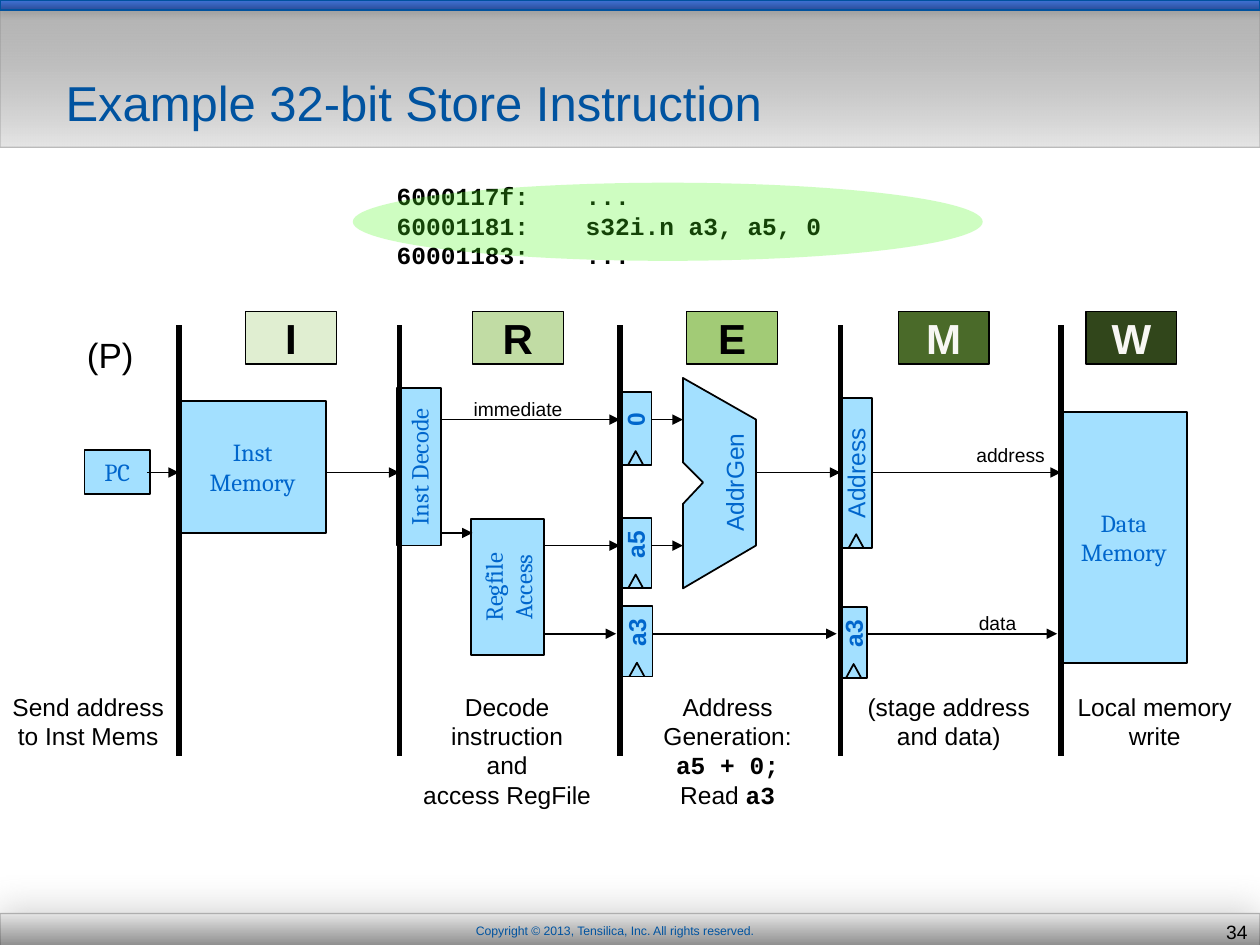
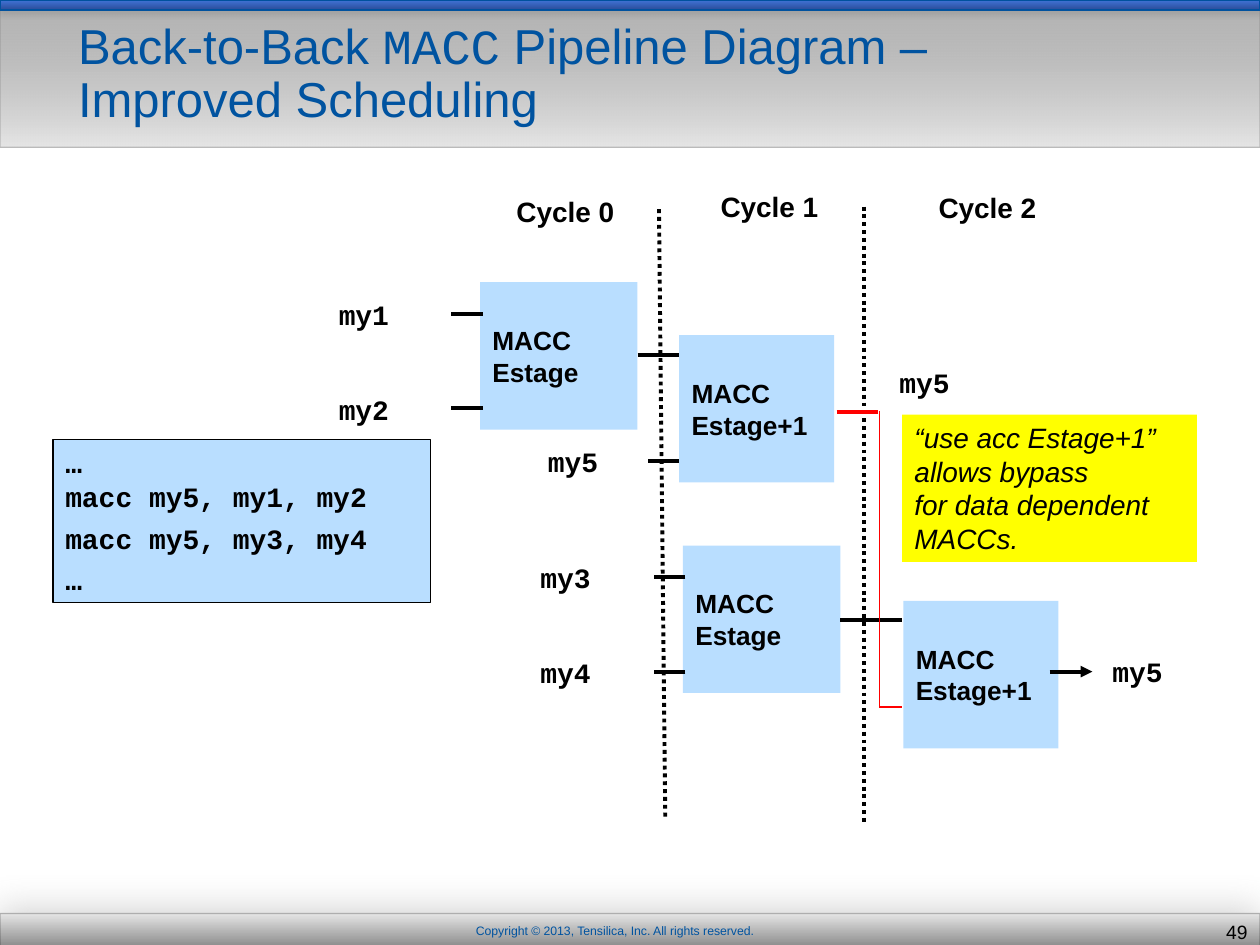
from dataclasses import dataclass

from lxml import etree
from pptx import Presentation
from pptx.dml.color import RGBColor
from pptx.enum import dml, shapes, text
from pptx.oxml.ns import qn
from pptx.util import Cm, Pt


@dataclass(frozen=True)
class Theme:
    sans: str = "Arial"
    serif: str = "Cambria"
    mono: str = "Courier New"
    black: str = "000000"
    blue: str = "0053A0"
    label: str = "0066CC"
    block: str = "A3E0FF"
    macc: str = "B9DEFF"
    note: str = "FFFF00"
    red: str = "FF0000"
    halo: str = "4DFB1D"
    pale: str = "F8F7F4"
    title: float = 28
    stage: float = 24
    lead: float = 20
    code: float = 16
    box: float = 15
    body: float = 14
    small: float = 11
    legal: float = 7


T = Theme()
UNIT = 2.54  # cm; a slide is 10 by 7.5 units
LEFT, CENTER, RIGHT = text.PP_ALIGN.LEFT, text.PP_ALIGN.CENTER, text.PP_ALIGN.RIGHT
TOP, MIDDLE, BOTTOM = text.MSO_ANCHOR.TOP, text.MSO_ANCHOR.MIDDLE, text.MSO_ANCHOR.BOTTOM
RECT, OVAL = shapes.MSO_SHAPE.RECTANGLE, shapes.MSO_SHAPE.OVAL

# Shared content
COPYRIGHT = "Copyright © 2013, Tensilica, Inc. All rights reserved."

# Store instruction: stages, blocks, registers, wires
LISTING = ["6000117f:\t...", "60001181:\ts32i.n a3, a5, 0", "60001183:\t..."]
BARS = [1.42 + 1.75 * i for i in range(5)]
BAR_TOP, BAR_END = 2.58, 6
STAGES = [("I", 1.95, "E0EED1", T.black), ("R", 3.75, "C1DCA4", T.black),
          ("E", 5.45, "A2CB76", T.black), ("M", 7.13, "4A6A29", T.pale),
          ("W", 8.62, "31461B", T.pale)]
BLOCKS = [(["PC"], (0.67, 3.57, 0.52, 0.35), 0),
          (["Inst", "Memory"], (1.42, 3.18, 1.17, 1.05), 0),
          (["Inst Decode"], (2.7, 3.53, 1.25, 0.35), 270),
          (["Regfile", "Access"], (3.49, 4.37, 1.08, 0.58), 270),
          (["Data Memory"], (8.42, 3.27, 1, 1.99), 0)]
ADDRGEN = [(5.42, 3.67), (5.58, 3.83), (5.42, 4), (5.42, 4.67),
           (6, 4.33), (6, 3.33), (5.42, 3)]
# label, frame, label length, label lift, bold
REGISTERS = [("0", (4.92, 3.11, 0.25, 0.58), 0.46, 0.07, True),
             ("a5", (4.92, 4.11, 0.25, 0.56), 0.5, 0.07, True),
             ("a3", (4.93, 4.81, 0.25, 0.56), 0.5, 0.07, True),
             ("a3", (6.67, 4.82, 0.21, 0.56), 0.5, 0.07, True),
             ("Address", (6.67, 3.16, 0.25, 1.19), 1.31, 0, False)]
ARROWS = [(1.17, 3.75, 1.42), (2.58, 3.75, 3.17), (3.5, 3.33, 4.92), (3.51, 4.23, 3.75),
          (4.32, 4.33, 4.92), (4.32, 5.03, 4.89), (5.17, 3.33, 5.42), (5.17, 4.33, 5.42),
          (5.18, 5.03, 6.64), (6, 3.75, 6.67), (6.92, 3.75, 8.42), (6.88, 5.03, 8.39)]
SIGNALS = [("immediate", (3.66, 3.1, 0.91, 0.28)), ("address", (7.65, 3.47, 0.75, 0.29)),
           ("data", (7.67, 4.8, 0.5, 0.28))]
CAPTIONS = [(["Send address to Inst Mems"], -0.01, 1.42),
            (["Decode instruction", "and", "access RegFile"], 3.15, 1.75),
            (["Address Generation:", [("a5 + 0;", True)],
              [("Read ", False), ("a3", True)]], 4.9, 1.75),
            (["(stage address", "and data)"], 6.57, 1.92),
            (["Local memory write"], 8.4, 1.53)]

# Back-to-back MACC: cycles, boxes, operands
CYCLES = [("Cycle 0", 4, 1.49), ("Cycle 1", 5.62, 1.45), ("Cycle 2", 7.35, 1.46)]
DIVIDERS = [(5.23, 1.66, 5.28, 6.5), (6.86, 1.64, 6.86, 6.54)]
# stage, left, top, width, inputs as (name, label left, drop, overlap)
MACCS = [("Estage", 3.81, 2.24, 1.25, [("my1", 2.59, 0.25, 0.02), ("my2", 2.59, 1, 0.02)]),
         ("Estage+1", 5.39, 2.66, 1.23, [("my5", 4.25, 1, 0)]),
         ("Estage", 5.42, 4.33, 1.25, [("my3", 4.19, 0.25, 0.02), ("my4", 4.19, 1, 0.02)]),
         ("Estage+1", 7.17, 4.77, 1.23, [])]
RESULTS = [("my5", 7.04, 2.85), ("my5", 8.73, 5.14)]
LINKS = [(5.06, 2.82, 5.39, 2.82), (6.67, 4.92, 7.16, 4.92)]
BYPASS = [(6.64, 3.27, 6.97, 3.27, 2.25), (6.98, 3.26, 6.98, 5.62, 1),
          (6.98, 5.61, 7.16, 5.61, 1)]
NOTE = ["“use acc Estage+1”", "allows bypass", "for data dependent", "MACCs."]
PROGRAM = ["…", "macc my5, my1, my2", "macc my5, my3, my4", "…"]


# Drawing helpers
def cm(v):
    return Cm(v * UNIT)


def rgb(c):
    return RGBColor.from_string(c)


def place(sp, frame):
    sp.left, sp.top, sp.width, sp.height = map(cm, frame)


def fade(sp, part, percent):
    color = sp._element.spPr.find(qn(part)).find(".//" + qn("a:srgbClr"))
    etree.SubElement(color, qn("a:alpha"), val=str(percent * 1000))


def write(sp, paras, size, color=T.black, face=T.sans, bold=False, italic=False,
          align=LEFT, anchor=TOP, wrap=True):
    """Fill a shape; a paragraph is a string or a list of (text, is code) runs."""
    tf = sp.text_frame
    tf.word_wrap, tf.vertical_anchor = wrap, anchor
    for i, para in enumerate(paras):
        p = tf.paragraphs[0] if i == 0 else tf.add_paragraph()
        p.alignment = align
        f = p.font
        f.size, f.color.rgb, f.name = Pt(size), rgb(color), face
        f.bold, f.italic = bold, italic
        if isinstance(para, str):
            p.text = para
            continue
        for words, is_code in para:
            r = p.add_run()
            r.text = words
            r.font.name = T.mono if is_code else face
            r.font.bold = bold or (is_code and sp.is_placeholder is False)
    return tf


def outline(sp, fill, line=T.black, width=1.0):
    sp.shadow.inherit = False
    if fill:
        sp.fill.solid()
        sp.fill.fore_color.rgb = rgb(fill)
    else:
        sp.fill.background()
    if line:
        sp.line.color.rgb, sp.line.width = rgb(line), Pt(width)
    else:
        sp.line.fill.background()


def shape(s, frame, fill, line=T.black, width=1.0, kind=RECT, turn=0):
    sp = s.shapes.add_shape(kind, *map(cm, frame))
    outline(sp, fill, line, width)
    sp.rotation = turn
    return sp


def label(s, frame, paras, size, turn=0, grow=False, **style):
    sp = s.shapes.add_textbox(*map(cm, frame))
    sp.rotation = turn
    tf = write(sp, paras, size, wrap=not grow, **style)
    if grow:
        tf.auto_size = text.MSO_AUTO_SIZE.SHAPE_TO_FIT_TEXT


def freeform(s, points, fill=None, close=True):
    pts = [(cm(x), cm(y)) for x, y in points]
    fb = s.shapes.build_freeform(*pts[0])
    fb.add_line_segments(pts[1:], close=close)
    outline(fb.convert_to_shape(), fill)


def line(s, x1, y1, x2, y2, width=1.0, color=T.black, arrow=False, dash=None):
    c = s.shapes.add_connector(shapes.MSO_CONNECTOR.STRAIGHT, *map(cm, (x1, y1, x2, y2)))
    c.line.width, c.line.color.rgb = Pt(width), rgb(color)
    if dash:
        c.line.dash_style = dash
    spPr = c._element.spPr
    if arrow:
        etree.SubElement(spPr.find(qn("a:ln")), qn("a:tailEnd"), type="triangle")
    etree.SubElement(spPr, qn("a:effectLst"))


# Bands, footer and title shared by the slides
def band(s, frame, top, bottom, edge, shadow=None):
    sp = shape(s, frame, top, edge, 0.75)
    sp.fill.gradient()
    sp.fill.gradient_angle = 270
    for stop, color in zip(sp.fill.gradient_stops, (top, bottom)):
        stop.color.rgb = rgb(color)
    if shadow:
        blur, dist, angle = shadow
        cast = etree.SubElement(sp._element.spPr.find(qn("a:effectLst")), qn("a:outerShdw"),
                                blurRad=str(Pt(blur)), dist=str(Pt(dist)),
                                dir=str(angle * 60000), rotWithShape="0")
        color = etree.SubElement(cast, qn("a:srgbClr"), val="808080")
        etree.SubElement(color, qn("a:alpha"), val="35000")
    return sp


def new_slide(prs, number, title, frame):
    s = prs.slides.add_slide(prs.slide_layouts[5])
    head = band(s, (0, 0, 10, 1.17), "808080", "E5E5E5", "808080")
    fade(head, "a:gradFill", 59)
    fade(head, "a:ln", 42)
    foot = band(s, (0, 7.25, 10, 0.3), "E5E5E5", "7F7F7F", T.black, (20.8, 3, 258))
    fade(foot, "a:ln", 23)
    label(s, (2.92, 7.28, 3.92, 0.22), [COPYRIGHT], T.legal, color=T.blue, align=CENTER)
    band(s, (0, 0, 10, 0.08), "4074D6", "2B4C9A", "00519E", (3.1, 1.8, 90))
    label(s, (9.21, 7.25, 0.79, 0.29), [str(number)], T.small, align=RIGHT, anchor=MIDDLE)
    sp = s.shapes.title
    s.shapes.element.append(sp._element)  # in front of the bands
    place(sp, frame)
    tf = write(sp, [title], T.title, T.blue, anchor=BOTTOM)
    tf.auto_size = text.MSO_AUTO_SIZE.NONE
    tf.paragraphs[0].line_spacing = Pt(30)
    return s


def store_slide(prs):
    s = new_slide(prs, 34, "Example 32-bit Store Instruction", (0.42, 0.17, 8.33, 0.92))
    # Blocks and address generator
    for words, frame, turn in BLOCKS:
        sp = shape(s, frame, T.block, turn=turn)
        write(sp, words, T.body, T.label, T.serif, align=CENTER, anchor=MIDDLE)
    freeform(s, ADDRGEN, T.block)
    label(s, (5.33, 3.66, 1, 0.34), ["AddrGen"], T.body, 270, color=T.label, align=CENTER)
    # Registers with clock marks
    for name, (x, y, w, h), length, lift, bold in REGISTERS:
        shape(s, (x, y, w, h), T.block)
        mid, end = x + w / 2, y + h
        label(s, (mid - length / 2, y + h / 2 - lift - 0.17, length, 0.34), [name], T.body,
              270, color=T.label, bold=bold, align=CENTER)
        freeform(s, [(mid - 0.06, end), (mid, end - 0.11), (mid + 0.06, end)], close=False)
    # Stage bars, wires and signal names
    for x in BARS:
        line(s, x, BAR_TOP, x, BAR_END, 3)
    for x1, y, x2 in ARROWS:
        line(s, x1, y, x2, y, arrow=True)
    for name, frame in SIGNALS:
        label(s, frame, [name], T.small, grow=True)
    # Stage tags and captions
    label(s, (0.59, 2.6, 0.57, 0.44), ["(P)"], T.lead, grow=True, align=CENTER)
    for letter, x, fill, ink in STAGES:
        sp = shape(s, (x, 2.47, 0.72, 0.42), fill, width=0.75)
        write(sp, [letter], T.stage, ink, bold=True, align=CENTER, anchor=MIDDLE, wrap=False)
    for words, x, w in CAPTIONS:
        label(s, (x, 5.44, w, 0.25 * len(words) + 0.1), words, T.body, align=CENTER)
    # Code with the current line highlighted
    label(s, (3.05, 1.39, 4.11, 0.81), LISTING, T.body, grow=True, face=T.mono, bold=True)
    halo = shape(s, (2.8, 1.45, 5, 0.62), T.halo, None, kind=OVAL)
    fade(halo, "a:solidFill", 27)


def macc_slide(prs):
    title = [("Back-to-Back ", False), ("MACC", True),
             (" Pipeline Diagram – Improved Scheduling", False)]
    s = new_slide(prs, 49, title, (0.52, 0.14, 8.5, 0.92))
    tag = dict(size=T.code, grow=True, bold=True, anchor=MIDDLE)
    # Cycles
    for name, x, y in CYCLES:
        label(s, (x, y, 0.99, 0.37), [name], **tag)
    # Boxes with their inputs
    for stage, x, y, w, inputs in MACCS:
        sp = shape(s, (x, y, w, 1.17), T.macc, None)
        write(sp, ["MACC", stage], T.box, bold=True, anchor=MIDDLE, wrap=False)
        for name, left, drop, overlap in inputs:
            line(s, x + overlap, y + drop, x + overlap - 0.25, y + drop, 2.25)
            label(s, (left, y + drop - 0.18, 0.61, 0.37), [name], face=T.mono, **tag)
    for name, x, y in RESULTS:
        label(s, (x, y, 0.61, 0.37), [name], face=T.mono, **tag)
    # Dividers, links and the bypass
    for ends in DIVIDERS:
        line(s, *ends, 2.25, dash=dml.MSO_LINE.ROUND_DOT)
    for ends in LINKS:
        line(s, *ends, 2.25)
    line(s, 8.33, 5.33, 8.67, 5.33, 2.25, arrow=True)
    for *ends, width in BYPASS:
        line(s, *ends, width, T.red)
    # Note and program
    write(shape(s, (7.16, 3.29, 2.34, 1.17), T.note, None), NOTE, T.code, italic=True)
    sp = shape(s, (0.42, 3.49, 3, 1.29), T.macc, width=0.75)
    tf = write(sp, PROGRAM, T.code, face=T.mono, bold=True, anchor=MIDDLE)
    for p in tf.paragraphs[2:]:
        p.space_before = Pt(4.5)


def main():
    prs = Presentation()
    prs.slide_width, prs.slide_height = cm(10), cm(7.5)
    store_slide(prs)
    macc_slide(prs)
    prs.save("out.pptx")


if __name__ == "__main__":
    main()
